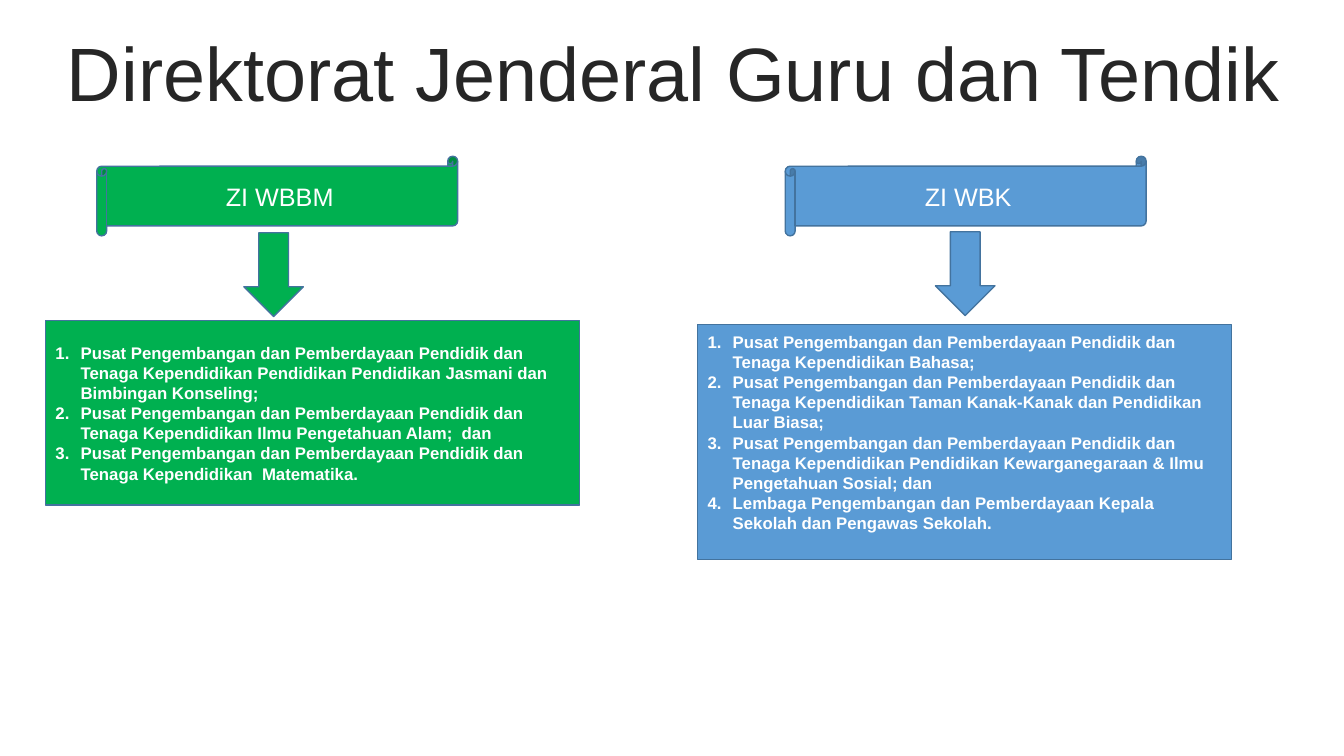
from lxml.etree import SubElement
from pptx import Presentation
from pptx.dml.color import RGBColor as Rgb
from pptx.enum.shapes import MSO_SHAPE as Kind
from pptx.enum.text import MSO_ANCHOR as Anchor, MSO_AUTO_SIZE as Fit, PP_ALIGN as Align
from pptx.oxml.ns import qn
from pptx.util import Pt

# Theme: colours, font and type sizes
theme = {
    "ink": Rgb.from_string("262626"),
    "white": Rgb.from_string("FFFFFF"),
    "edge": Rgb.from_string("43739E"),
    "green": Rgb.from_string("00B050"),
    "blue": Rgb.from_string("5A9BD5"),
    "font": "Arial",
    "title": Pt(54),
    "head": Pt(18),
    "list": Pt(12),
}

# Content: one column per zone, boxes as left, top, width, height
center = "Pusat Pengembangan dan Pemberdayaan Pendidik dan Tenaga Kependidikan "
zones = [
    {
        "head": "ZI WBBM", "fill": "green", "foot": 3.6,
        "scroll": (69.1, 111.6, 257.8, 56.9),
        "arrow": (174.2, 166.3, 42.5, 59.8),
        "panel": (32.4, 229, 381.6, 131.8),
        "items": [
            center + "Pendidikan Pendidikan Jasmani dan Bimbingan Konseling;",
            center + "Ilmu Pengetahuan Alam;  dan",
            center + " Matematika.",
        ],
    },
    {
        "head": "ZI WBK", "fill": "blue", "foot": 17.4,
        "scroll": (560.9, 111.6, 257.8, 56.9),
        "arrow": (668.2, 165.6, 42.5, 59.8),
        "panel": (498.2, 231.8, 381.6, 167.8),
        "items": [
            center + "Bahasa;",
            center + "Taman Kanak-Kanak dan Pendidikan Luar Biasa;",
            center + "Pendidikan Kewarganegaraan & Ilmu Pengetahuan Sosial; dan",
            "Lembaga Pengembangan dan Pemberdayaan Kepala Sekolah dan Pengawas Sekolah.",
        ],
    },
]


def place(shape, box, fill=None):
    """Set the box and, if asked, the fill and edge of a shape."""
    for name, value in zip(("left", "top", "width", "height"), box):
        setattr(shape, name, Pt(value))
    if fill:
        shape.fill.solid()
        shape.fill.fore_color.rgb = theme[fill]
        shape.line.color.rgb = theme["edge"]
        shape.line.width = Pt(1)


def write(para, text, size, color, form):
    """Fill a paragraph with one run and apply its format."""
    run = para.add_run()
    run.text = text
    run.font.color.rgb = theme[color]
    look = {"name": theme["font"], "size": theme[size], "bold": size == "list"}
    for target, values in ((run.font, look), (para, form)):
        for name, value in values.items():
            setattr(target, name, value)


# Slide with a title and two list placeholders
deck = Presentation()
deck.slide_width, deck.slide_height = Pt(960), Pt(540)
slide = deck.slides.add_slide(deck.slide_layouts[3])
title, *panels = list(slide.placeholders)[:3]

# Title
place(title, (25.2, 26.6, 911.5, 56.9))
frame = title.text_frame
frame.auto_size = Fit.NONE
frame.vertical_anchor = Anchor.MIDDLE
write(frame.paragraphs[0], "Direktorat Jenderal Guru dan Tendik", "title", "ink",
      {"alignment": Align.CENTER, "line_spacing": 0.9})

for zone, panel in zip(zones, panels):
    # Numbered list panel
    place(panel, zone["panel"], zone["fill"])
    frame = panel.text_frame
    form = {"auto_size": Fit.NONE, "word_wrap": True,
            "vertical_anchor": Anchor.MIDDLE, "margin_bottom": Pt(zone["foot"])}
    for name, value in form.items():
        setattr(frame, name, value)
    for i, item in enumerate(zone["items"]):
        para = frame.add_paragraph() if i else frame.paragraphs[0]
        write(para, item, "list", "white",
              {"alignment": Align.LEFT, "line_spacing": 1.0, "space_before": Pt(0)})
        props = para._p.get_or_add_pPr()
        props.set("marL", str(Pt(18)))
        props.set("indent", str(-Pt(18)))
        SubElement(props, qn("a:buFont"), typeface=theme["font"])
        SubElement(props, qn("a:buAutoNum"), type="arabicPeriod")

    # Scroll heading and arrow down to the panel
    for part, kind in (("scroll", Kind.HORIZONTAL_SCROLL), ("arrow", Kind.DOWN_ARROW)):
        shape = slide.shapes.add_shape(kind, 0, 0, 0, 0)
        shape.shadow.inherit = False
        place(shape, zone[part], zone["fill"])
        if part == "scroll":
            frame = shape.text_frame
            frame.vertical_anchor = Anchor.MIDDLE
            write(frame.paragraphs[0], zone["head"], "head", "white",
                  {"alignment": Align.CENTER})

deck.save("out.pptx")
